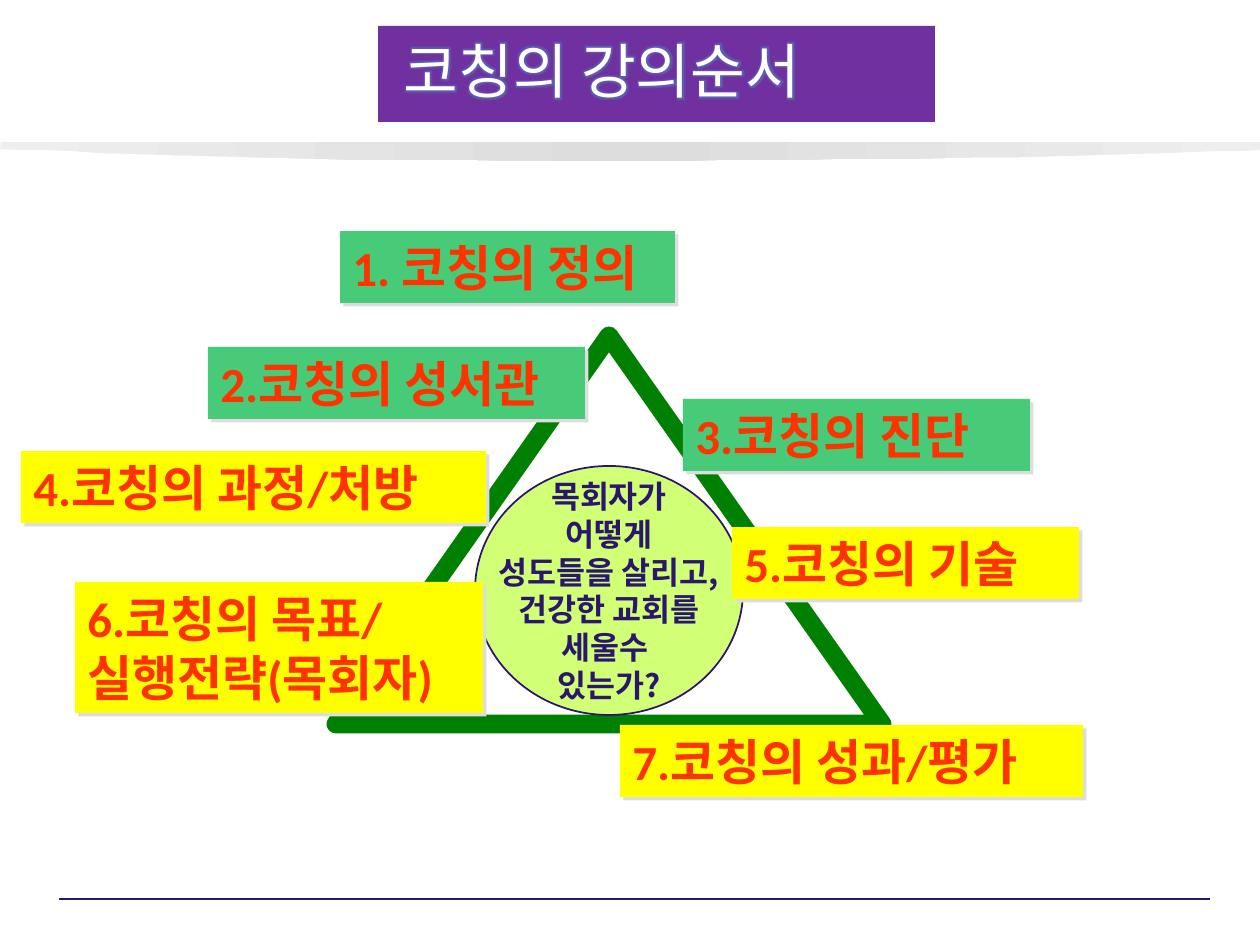
from dataclasses import dataclass
from typing import NamedTuple

from lxml.etree import SubElement
from pptx import Presentation
from pptx.dml.color import RGBColor as Rgb
from pptx.enum.shapes import MSO_CONNECTOR as Link, MSO_SHAPE as Kind
from pptx.enum.text import MSO_ANCHOR as Anchor, MSO_AUTO_SIZE as Fit, PP_ALIGN as Align
from pptx.oxml import parse_xml
from pptx.oxml.ns import nsdecls, qn
from pptx.util import Pt

SCALE = 914400 / 126


@dataclass(frozen=True)
class Theme:
    latin: str = "Calibri"
    asian: str = "Noto Sans CJK KR"
    white: str = "FFFFFF"
    purple: str = "7030A0"
    navy: str = "2B166E"
    glow: str = "4F81BD"
    red: str = "FF3300"
    mint: str = "47CB79"
    yellow: str = "FFFF00"
    lime: str = "CCFF66"
    green: str = "008000"
    shade: str = "DDDDDD"
    pale: str = "EEEEEE"
    head: int = 34
    label: int = 28
    core: int = 18


class Box(NamedTuple):
    x: int
    y: int
    w: int
    h: int


class Label(NamedTuple):
    box: Box
    fill: str
    text: str


T = Theme()
TITLE = Box(378, 26, 557, 96)
PEAK = Box(336, 336, 546, 388)
CORE = Box(475, 466, 268, 249)
QUERY = "목회자가\n어떻게\n성도들을 살리고,\n건강한 교회를\n세울수 \n있는가?"
UNDER = [
    Label(Box(208, 347, 377, 72), T.mint, "2.코칭의 성서관"),
    Label(Box(340, 231, 335, 72), T.mint, "1. 코칭의 정의"),
]
OVER = [
    Label(Box(683, 399, 347, 72), T.mint, "3.코칭의 진단"),
    Label(Box(21, 451, 465, 72), T.yellow, "4.코칭의 과정/처방"),
    Label(Box(75, 582, 408, 131), T.yellow, "6.코칭의 목표/\n실행전략(목회자)"),
    Label(Box(620, 725, 463, 72), T.yellow, "7.코칭의 성과/평가"),
    Label(Box(732, 527, 347, 72), T.yellow, "5.코칭의 기술"),
]
CURVES = [
    ((0, 149), (67, 151), (257, 159), (402, 160)),
    ((402, 160), (547, 161), (726, 161), (868, 159)),
    ((868, 159), (1012, 158), (1196, 152), (1261, 150)),
]


def px(n: float) -> int:
    return round(n * SCALE)


def put(obj, **vals) -> None:
    """Set each named attribute of obj."""
    for name, val in vals.items():
        setattr(obj, name, val)


def paint(fill, color: str) -> None:
    fill.solid()
    fill.fore_color.rgb = Rgb.from_string(color)


def stroke(line, color: str, width: float) -> None:
    paint(line.fill, color)
    line.width = Pt(width)


def shape(slide, kind, box: Box):
    item = slide.shapes.add_shape(kind, *map(px, box))
    item.shadow.inherit = False
    item.line.fill.background()
    return item


def write(frame, text: str, size: int, color: str, latin: str, bold: bool, align) -> None:
    frame.text = text
    for par in frame.paragraphs:
        par.alignment = align
        for run in par.runs:
            put(run.font, size=Pt(size), bold=bold, name=latin)
            run.font.color.rgb = Rgb.from_string(color)
            SubElement(run.font._element, qn("a:ea")).set("typeface", T.asian)


def cast(item) -> None:
    """Give the shape a small hard shadow to the lower right."""
    item._element.spPr.find(qn("a:effectLst")).append(parse_xml(
        f'<a:outerShdw {nsdecls("a")} dist="{Pt(2.8)}" dir="2700000" algn="ctr" '
        f'rotWithShape="0"><a:srgbClr val="{T.shade}"/></a:outerShdw>'))


def label(slide, spec_row: Label) -> None:
    item = shape(slide, Kind.RECTANGLE, spec_row.box)
    paint(item.fill, spec_row.fill)
    cast(item)
    put(item.text_frame, word_wrap=True, vertical_anchor=Anchor.TOP, margin_right=0)
    write(item.text_frame, spec_row.text, T.label, T.red, T.latin, True, Align.LEFT)


def swoosh(slide, steps: int = 12) -> None:
    """Draw the grey band whose lower edge follows the curves."""
    pts = [(0, 149)]
    for a, b, c, d in CURVES:
        for i in range(1, steps + 1):
            t = i / steps
            u = 1 - t
            pts.append(tuple(
                u**3 * a[k] + 3 * u * u * t * b[k] + 3 * u * t * t * c[k] + t**3 * d[k]
                for k in (0, 1)))
    path_pen = slide.shapes.build_freeform(1, 142, scale=SCALE)
    path_pen.add_line_segments(pts + [(1261, 142)], close=True)
    item = path_pen.convert_to_shape()
    item.shadow.inherit = False
    item.line.fill.background()
    stops = "".join(
        f'<a:gs pos="{pos}"><a:srgbClr val="{color}"/></a:gs>'
        for pos, color in ((0, T.pale), (50000, T.shade), (100000, T.pale)))
    item._element.spPr.find(qn("a:custGeom")).addnext(parse_xml(
        f'<a:gradFill {nsdecls("a")}><a:gsLst>{stops}</a:gsLst><a:lin ang="0"/></a:gradFill>'))


def rule(slide) -> None:
    line = slide.shapes.add_connector(Link.STRAIGHT, px(59), px(899), px(1210), px(899))
    stroke(line.line, T.navy, 0.75)
    SubElement(line._element.spPr, qn("a:effectLst"))


def title(slide) -> None:
    item = slide.shapes.title
    put(item, **dict(zip(("left", "top", "width", "height"), map(px, TITLE))))
    paint(item.fill, T.purple)
    frame = item.text_frame
    put(frame, word_wrap=True, auto_size=Fit.NONE, vertical_anchor=Anchor.MIDDLE)
    write(frame, " 코칭의 강의순서", T.head, T.white, T.asian, False, Align.LEFT)
    par = frame.paragraphs[0]
    par.line_spacing = 0.9
    par.runs[0].font._element.find(qn("a:solidFill")).addnext(parse_xml(
        f'<a:effectLst {nsdecls("a")}><a:glow rad="{Pt(4)}"><a:srgbClr val="{T.glow}">'
        '<a:alpha val="60000"/></a:srgbClr></a:glow></a:effectLst>'))


def core(slide) -> None:
    item = shape(slide, Kind.OVAL, CORE)
    paint(item.fill, T.lime)
    tint = item.fill._xPr.find(qn("a:solidFill"))[0]
    SubElement(tint, qn("a:alpha")).set("val", "89000")
    stroke(item.line, T.navy, 1)
    put(item.text_frame, word_wrap=False, vertical_anchor=Anchor.MIDDLE)
    write(item.text_frame, QUERY, T.core, T.navy, T.asian, True, Align.CENTER)


def main() -> None:
    deck = Presentation()
    put(deck, slide_width=px(1260), slide_height=px(945))
    slide = deck.slides.add_slide(deck.slide_layouts[5])
    title(slide)
    swoosh(slide)
    rule(slide)
    peak = shape(slide, Kind.FLOWCHART_EXTRACT, PEAK)
    peak.fill.background()
    stroke(peak.line, T.green, 10.75)
    for row in UNDER:
        label(slide, row)
    core(slide)
    for row in OVER:
        label(slide, row)
    deck.save("out.pptx")


if __name__ == "__main__":
    main()
